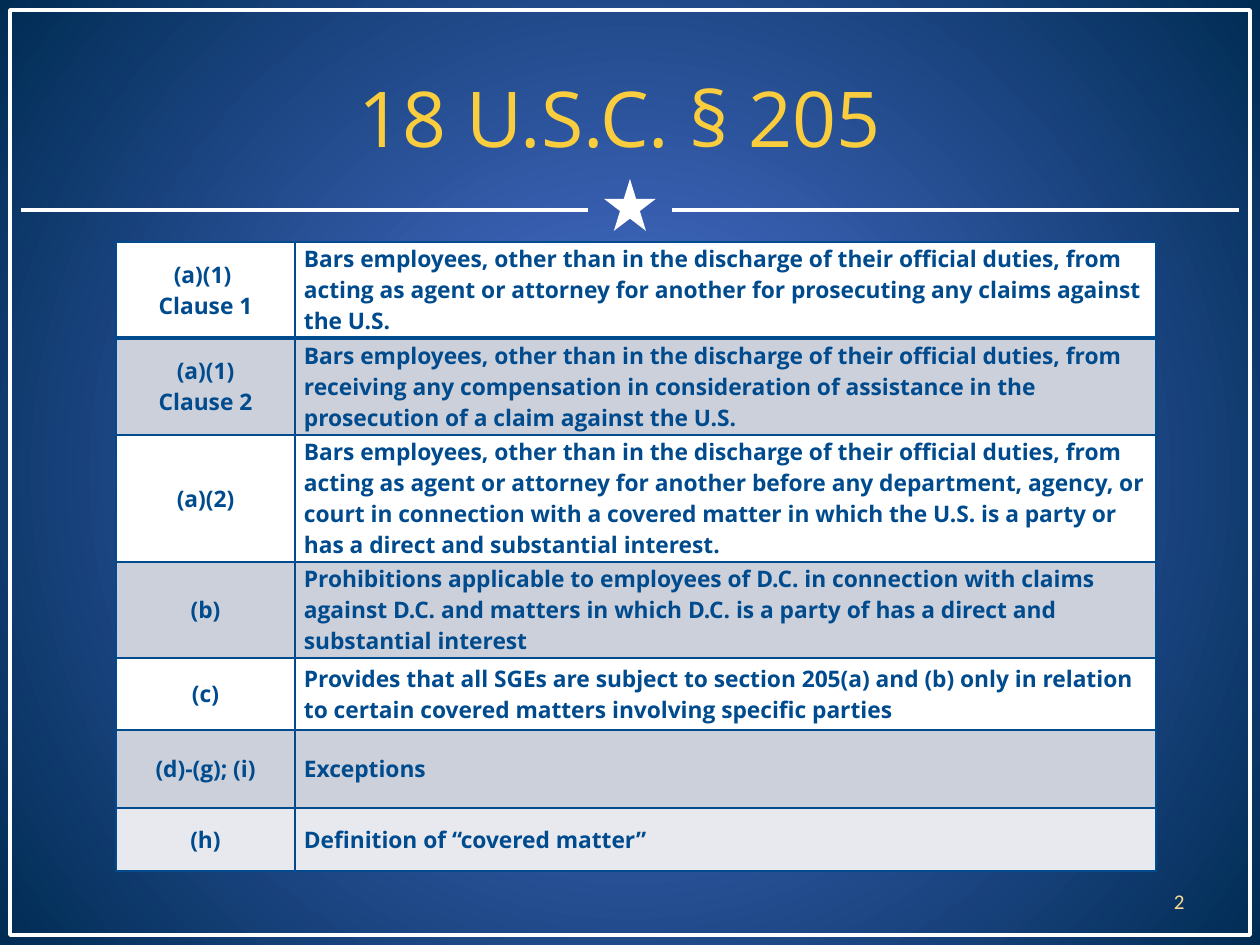
from dataclasses import dataclass

from lxml.etree import SubElement
from pptx import Presentation
from pptx.dml.color import RGBColor as RGB
from pptx.enum.shapes import MSO_CONNECTOR as CONN, MSO_SHAPE as SHAPE
from pptx.enum.text import MSO_ANCHOR as ANCHOR, PP_ALIGN as ALIGN
from pptx.oxml.ns import qn
from pptx.util import Pt

EMU_PER_PX = 914400 / 126


@dataclass(frozen=True)
class Theme:
    glow: str = "5176DA"
    navy: str = "002C54"
    white: str = "FFFFFF"
    gold: str = "F9CD3D"
    pale_gold: str = "FBDB92"
    blue: str = "004B8D"
    band: str = "CCD0DB"
    last_row: str = "E7E9EE"
    font: str = "Open Sans"
    number_font: str = "Calibri"
    title_size: int = 44
    table_size: int = 13
    number_size: int = 12
    line: int = 2
    border: int = 1
    header_border: int = 3


T = Theme()

COLUMNS = (179, 861)
# subsection, summary, row height, fill
ROWS = (
    ("(a)(1) \nClause 1",
     "Bars employees, other than in the discharge of their official duties, from acting as "
     "agent or attorney for another for prosecuting any claims against the U.S.",
     96, T.white),
    ("(a)(1)\nClause 2",
     "Bars employees, other than in the discharge of their official duties, from receiving any "
     "compensation in consideration of assistance in the prosecution of a claim against the U.S.",
     97, T.band),
    ("(a)(2)",
     "Bars employees, other than in the discharge of their official duties, from acting as "
     "agent or attorney for another before any department, agency, or court in connection with "
     "a covered matter in which the U.S. is a party or has a direct and substantial interest.",
     127, T.white),
    ("(b)",
     "Prohibitions applicable to employees of D.C. in connection with claims against D.C. and "
     "matters in which D.C. is a party of has a direct and substantial interest",
     96, T.band),
    ("(c)",
     "Provides that all SGEs are subject to section 205(a) and (b) only in relation to certain "
     "covered matters involving specific parties",
     72, T.white),
    ("(d)-(g); (i)", "Exceptions", 78, T.band),
    ("(h)", "Definition of “covered matter”", 63, T.last_row),
)


def px(n):
    return round(n * EMU_PER_PX)


def box(*lengths):
    return [px(n) for n in lengths]


def set_background(slide):
    """Radial gradient spreading from the middle of the slide."""
    fill = slide.background.fill
    fill.gradient()
    for stop, color in zip(fill.gradient_stops, (T.glow, T.navy)):
        stop.color.rgb = RGB.from_string(color)
    grad = slide.element.find(".//" + qn("a:gradFill"))
    grad.remove(grad.find(qn("a:lin")))
    radial = SubElement(grad, qn("a:path"), path="circle")
    SubElement(radial, qn("a:fillToRect"), dict.fromkeys("ltrb", "50000"))


def add_rule(slide, x1, x2, y):
    ln = slide.shapes.add_connector(CONN.STRAIGHT, *box(x1, y, x2, y))
    ln.line.color.rgb = RGB.from_string(T.white)
    ln.line.width = Pt(T.line)
    SubElement(ln.element.spPr, qn("a:effectLst"))


def add_star(slide, *at):
    sp = slide.shapes.add_shape(SHAPE.STAR_5_POINT, *box(*at))
    sp.shadow.inherit = False
    sp.fill.solid()
    sp.fill.fore_color.rgb = RGB.from_string(T.white)
    sp.line.fill.background()


def add_frame(slide, *at):
    sp = slide.shapes.add_shape(SHAPE.RECTANGLE, *box(*at))
    sp.shadow.inherit = False
    sp.fill.background()
    sp.line.color.rgb = RGB.from_string(T.white)
    sp.line.width = Pt(T.line)


def set_text(tf, text, size, color, align, font=T.font, bold=False):
    tf.text = text
    for p in tf.paragraphs:
        p.alignment = align
        p.font.name = font
        p.font.size = Pt(size)
        p.font.bold = bold
        p.font.color.rgb = RGB.from_string(color)


def add_text(slide, at, *style, **options):
    tf = slide.shapes.add_textbox(*box(*at)).text_frame
    tf.word_wrap = True
    tf.vertical_anchor = ANCHOR.MIDDLE
    set_text(tf, *style, **options)


def set_borders(cell, top, bottom):
    """Must run before the cell is filled: borders come first in tcPr."""
    tc_pr = cell._tc.get_or_add_tcPr()
    widths = {"L": T.border, "R": T.border, "T": top, "B": bottom}
    for side, width in widths.items():
        ln = SubElement(tc_pr, qn("a:ln" + side), w=str(Pt(width)))
        fill = SubElement(ln, qn("a:solidFill"))
        SubElement(fill, qn("a:srgbClr"), val=T.blue)


def add_statute_table(slide, left, top):
    height = sum(row[2] for row in ROWS)
    table = slide.shapes.add_table(
        len(ROWS), len(COLUMNS), *box(left, top, sum(COLUMNS), height)).table
    table.first_row = table.horz_banding = False
    for column, width in zip(table.columns, COLUMNS):
        column.width = px(width)
    for i, (*texts, row_height, fill) in enumerate(ROWS):
        table.rows[i].height = px(row_height)
        above = T.header_border if i == 1 else T.border
        below = T.header_border if i == 0 else T.border
        for j, (text, align) in enumerate(zip(texts, (ALIGN.CENTER, ALIGN.LEFT))):
            cell = table.cell(i, j)
            set_borders(cell, above, below)
            cell.fill.solid()
            cell.fill.fore_color.rgb = RGB.from_string(fill)
            cell.vertical_anchor = ANCHOR.MIDDLE
            cell.margin_left = cell.margin_right = px(9)
            cell.margin_top = cell.margin_bottom = 0
            set_text(cell.text_frame, text, T.table_size, T.blue, align, bold=True)


def main():
    prs = Presentation()
    prs.slide_width, prs.slide_height = box(1260, 945)
    slide = prs.slides.add_slide(prs.slide_layouts[6])
    set_background(slide)
    add_rule(slide, 21, 588, 210)
    add_star(slide, 604, 179, 52, 52)
    add_rule(slide, 672, 1239, 210)
    add_frame(slide, 10, 10, 1240, 925)
    add_text(slide, (63, 38, 1134, 157), "18 U.S.C. § 205 ", T.title_size, T.gold, ALIGN.CENTER)
    add_text(slide, (903, 876, 294, 50), "2", T.number_size, T.pale_gold, ALIGN.RIGHT,
             font=T.number_font)
    add_statute_table(slide, 116, 242)
    prs.save("out.pptx")


if __name__ == "__main__":
    main()
